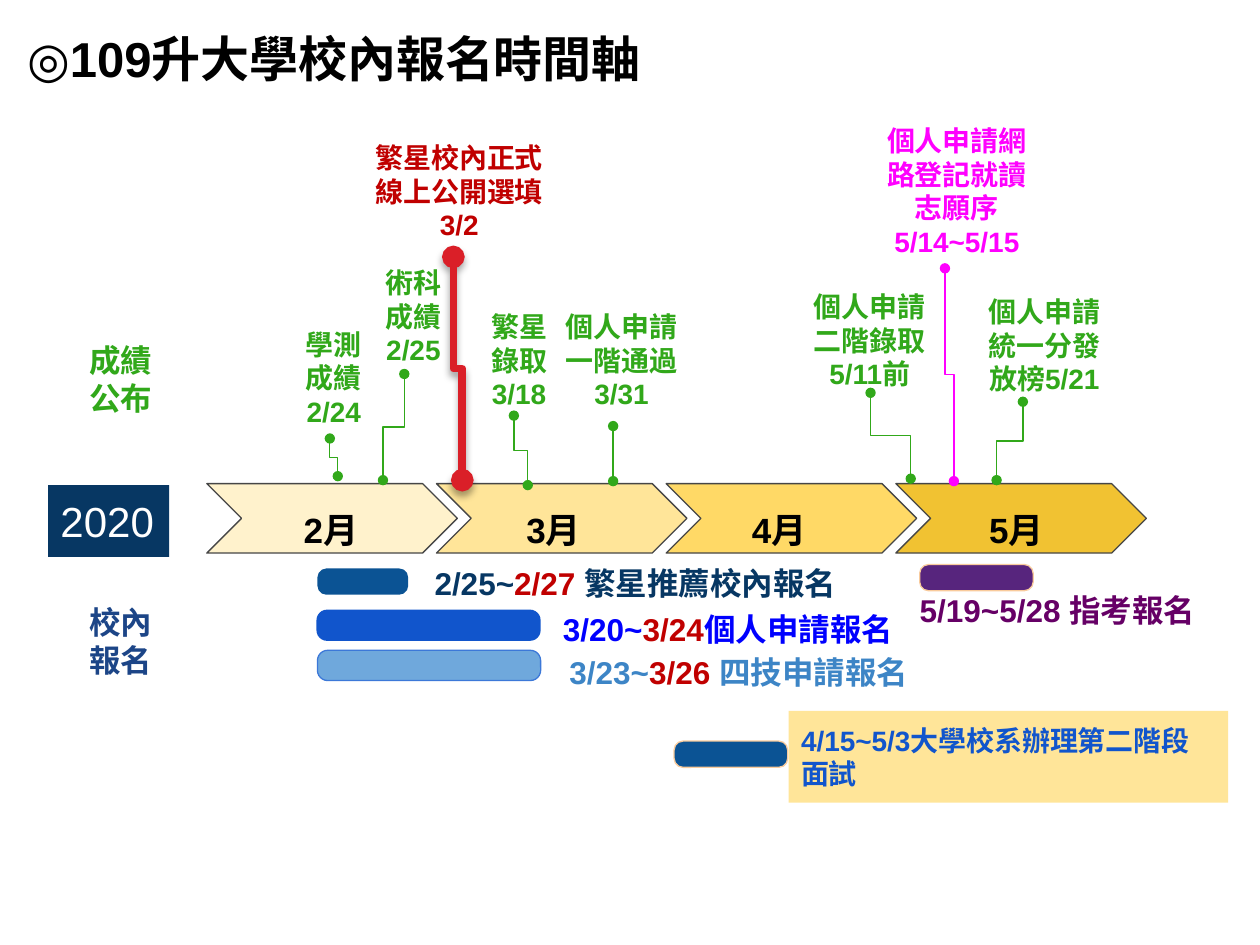
from lxml import etree
from pptx import Presentation
from pptx.dml.color import RGBColor
from pptx.enum import shapes, text
from pptx.oxml.ns import qn
from pptx.util import Cm, Pt

GREEN = RGBColor(0x31, 0xA8, 0x1A)
RED = RGBColor(0xC0, 0x00, 0x00)
BRIGHT_RED = RGBColor(0xDA, 0x1F, 0x28)
MAGENTA = RGBColor(0xFF, 0x00, 0xFF)
NAVY = RGBColor(0x07, 0x37, 0x63)
SLATE_BLUE = RGBColor(0x1C, 0x45, 0x87)
DEEP_BLUE = RGBColor(0x0B, 0x53, 0x94)
ROYAL_BLUE = RGBColor(0x11, 0x55, 0xCC)
PURE_BLUE = RGBColor(0x00, 0x00, 0xFF)
STEEL_BLUE = RGBColor(0x3D, 0x85, 0xC6)
LIGHT_BLUE = RGBColor(0x6F, 0xA8, 0xDC)
EDGE_BLUE = RGBColor(0x3C, 0x78, 0xD8)
PURPLE = RGBColor(0x66, 0x00, 0x66)
VIOLET = RGBColor(0x57, 0x25, 0x7D)
PEACH = RGBColor(0xF9, 0xCB, 0x9C)
CREAM = RGBColor(0xFF, 0xF2, 0xCC)
YELLOW = RGBColor(0xFF, 0xE5, 0x99)
AMBER = RGBColor(0xFF, 0xD9, 0x66)
GOLD = RGBColor(0xF1, 0xC2, 0x32)
GRAY = RGBColor(0x46, 0x46, 0x46)
BLACK = RGBColor(0x00, 0x00, 0x00)
WHITE = RGBColor(0xFF, 0xFF, 0xFF)

LEFT, CENTER = text.PP_ALIGN.LEFT, text.PP_ALIGN.CENTER
TOP, MIDDLE, BOTTOM = text.MSO_ANCHOR.TOP, text.MSO_ANCHOR.MIDDLE, text.MSO_ANCHOR.BOTTOM

presentation = Presentation()
presentation.slide_width, presentation.slide_height = Cm(25.4), Cm(19.05)
slide = presentation.slides.add_slide(presentation.slide_layouts[6])


def write(shape, lines, size, align=LEFT, anchor=TOP, bold=True):
    """Fill a shape with text; each line is a list of (wording, colour) runs."""
    frame = shape.text_frame
    frame.word_wrap = True
    frame.vertical_anchor = anchor
    frame.margin_left = frame.margin_right = Cm(0.25)
    frame.margin_top = frame.margin_bottom = Cm(0.25)
    for index, line in enumerate(lines):
        paragraph = frame.add_paragraph() if index else frame.paragraphs[0]
        paragraph.alignment = align
        for wording, color in line:
            run = paragraph.add_run()
            run.text = wording
            run.font.size, run.font.bold, run.font.name = Pt(size), bold, "Arial"
            run.font.color.rgb = color
            etree.SubElement(run.font._element, qn("a:ea"), typeface="Arial")


def add_block(kind, box, fill, line=None):
    shape = slide.shapes.add_shape(kind, *map(Cm, box))
    shape.shadow.inherit = False
    shape.fill.solid()
    shape.fill.fore_color.rgb = fill
    if line is None:
        shape.line.fill.background()
    else:
        shape.line.color.rgb = line
        shape.line.width = Pt(0.75)
    return shape


title = slide.shapes.add_textbox(Cm(0.3), Cm(0.33), Cm(19.69), Cm(2.26))
write(title, [[("◎109升大學校內報名時間軸", BLACK)]], 28)

# Month axis
year = add_block(shapes.MSO_SHAPE.RECTANGLE, (0.97, 9.78, 2.44, 1.45), NAVY)
write(year, [[("2020", WHITE)]], 24, anchor=MIDDLE, bold=False)
months = [("2月", CREAM, 5.87), ("3月", YELLOW, 10.36), ("4月", AMBER, 14.91), ("5月", GOLD, 19.69)]
for index, (month, fill, label_left) in enumerate(months):
    add_block(shapes.MSO_SHAPE.CHEVRON, (4.17 + 4.63 * index, 9.75, 5.05, 1.4), fill, GRAY)
    label = slide.shapes.add_textbox(Cm(label_left), Cm(9.6), Cm(2.29), Cm(1.75))
    write(label, [[(month, BLACK)]], 20, anchor=BOTTOM)

# Row headings and event labels
labels = [
    (["成績公布"], 18, GREEN, (1.5, 6.63, 1.88, 2.41)),
    (["校內報名"], 18, SLATE_BLUE, (1.5, 11.91, 1.88, 2.59)),
    (["學測成績", "2/24"], 16, GREEN, (5.79, 6.35, 1.88, 1.98)),
    (["術科成績", "2/25"], 16, GREEN, (7.47, 5.11, 1.73, 2.41)),
    (["繁星校內正式", "線上公開選填", "3/2"], 16, RED, (6.86, 2.59, 4.8, 2.01)),
    (["繁星錄取3/18"], 16, GREEN, (9.6, 5.99, 1.73, 2.13)),
    (["個人申請一階通過3/31"], 16, GREEN, (11.02, 5.99, 3.02, 2.18)),
    (["個人申請二階錄取5/11前"], 16, GREEN, (16.1, 5.59, 2.87, 2.34)),
    (["個人申請網路登記就讀志願序5/14~5/15"], 16, MAGENTA, (17.6, 2.24, 3.38, 3.15)),
    (["個人申請統一分發放榜5/21"], 16, GREEN, (19.53, 5.69, 3.05, 2.54)),
]
for lines, size, color, box in labels:
    label = slide.shapes.add_textbox(*map(Cm, box))
    write(label, [[(line, color)] for line in lines], size, CENTER)

# Leaders from the labels down to the axis
leaders = [
    (6.65, 8.84, 6.81, 9.6, GREEN, 0.75),
    (8.15, 7.54, 7.72, 9.68, GREEN, 0.75),
    (10.36, 8.38, 10.64, 9.78, GREEN, 0.75),
    (12.36, 8.59, 12.36, 9.7, GREEN, 0.75),
    (17.55, 7.92, 18.36, 9.65, GREEN, 0.75),
    (19.05, 5.41, 19.23, 9.7, MAGENTA, 0.75),
    (20.62, 8.1, 20.09, 9.68, GREEN, 0.75),
    (9.14, 5.18, 9.32, 9.68, BRIGHT_RED, 4.33),
]
for x1, y1, x2, y2, color, width in leaders:
    # An elbow leaves sideways, so it is laid flat and turned to leave downwards
    side = 1 if x2 > x1 else -1
    center_x, center_y = (x1 + x2) / 2, (y1 + y2) / 2
    reach, rise = side * (y2 - y1) / 2, abs(x2 - x1) / 2
    leader = slide.shapes.add_connector(
        shapes.MSO_CONNECTOR.ELBOW, Cm(center_x + reach), Cm(center_y - rise),
        Cm(center_x - reach), Cm(center_y + rise))
    properties = leader._element.spPr
    properties.find(qn("a:xfrm")).set("rot", "16200000" if side > 0 else "5400000")
    leader.line.color.rgb = color
    leader.line.width = Pt(width)
    for end in ("a:headEnd", "a:tailEnd"):
        etree.SubElement(leader.line._get_or_add_ln(), qn(end), type="oval")
    effects = etree.SubElement(properties, qn("a:effectLst"))
    if color == BRIGHT_RED:
        shadow = etree.SubElement(effects, qn("a:outerShdw"), blurRad=str(Pt(4)),
                                  dist=str(Pt(3)), dir="5400000", rotWithShape="0")
        shade = etree.SubElement(shadow, qn("a:srgbClr"), val="000000")
        etree.SubElement(shade, qn("a:alpha"), val="35000")

# Registration periods
bars = [
    ((6.4, 11.46, 1.83, 0.53), DEEP_BLUE, None),
    ((6.38, 12.29, 4.52, 0.63), ROYAL_BLUE, None),
    ((6.4, 13.11, 4.5, 0.61), LIGHT_BLUE, EDGE_BLUE),
    ((13.59, 14.94, 2.29, 0.53), DEEP_BLUE, PEACH),
    ((18.54, 11.38, 2.29, 0.53), VIOLET, PEACH),
]
for box, fill, line in bars:
    bar = add_block(shapes.MSO_SHAPE.ROUNDED_RECTANGLE, box, fill, line)
    bar.adjustments[0] = 0.34

periods = [
    ([("2/25~", NAVY), ("2/27 ", RED), ("繁星推薦校內報名", NAVY)], (8.51, 11.13, 9.45, 1.45), TOP),
    ([("3/20~", PURE_BLUE), ("3/24", RED), ("個人申請報名", PURE_BLUE)],
     (11.1, 12.12, 7.34, 1.12), MIDDLE),
    ([("3/23~", STEEL_BLUE), ("3/26 ", RED), ("四技申請報名", STEEL_BLUE)],
     (11.23, 12.98, 7.59, 1.12), MIDDLE),
    ([("5/19~5/28 指考報名", PURPLE)], (18.29, 11.73, 7.34, 1.12), MIDDLE),
]
for runs, box, anchor in periods:
    period = slide.shapes.add_textbox(*map(Cm, box))
    write(period, [runs], 18, anchor=anchor)

interview = add_block(shapes.MSO_SHAPE.RECTANGLE, (15.9, 14.33, 8.86, 1.85), YELLOW)
write(interview, [[("4/15~5/3大學校系辦理第二階段面試", ROYAL_BLUE)]], 16)

presentation.save("out.pptx")
